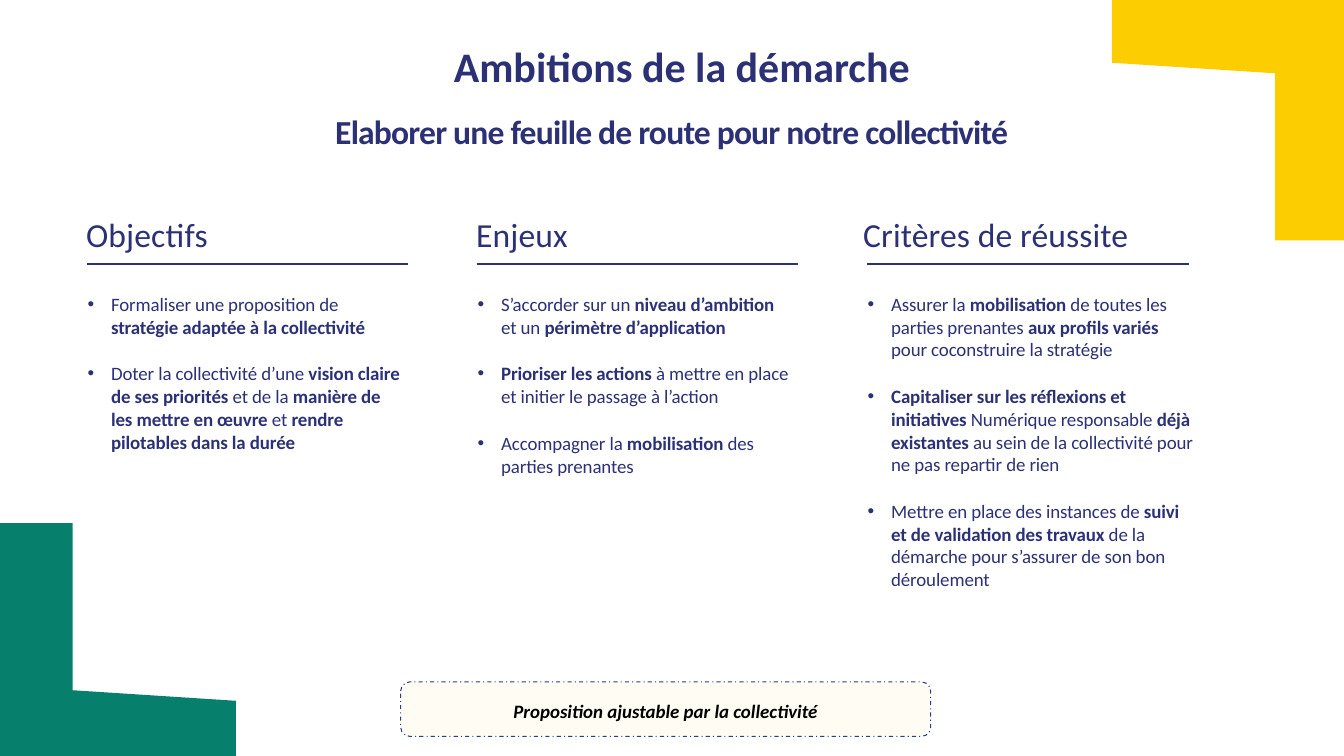
from pptx import Presentation
from pptx.dml.color import RGBColor
from pptx.enum.dml import MSO_LINE
from pptx.enum.shapes import MSO_CONNECTOR, MSO_SHAPE
from pptx.enum.text import MSO_ANCHOR, PP_ALIGN
from pptx.oxml.ns import qn
from pptx.util import Inches, Pt
from lxml.etree import SubElement

COLORS = {
    "ink": "2C3176",
    "yellow": "FCCD00",
    "green": "06806C",
    "cream": "FFFDF3",
    "border": "274084",
    "black": "000000",
}
FONT = "Calibri"
WIDTH, HEIGHT = Inches(17.78), Inches(10)

# The grid has 100 columns and 100 rows.
FIRST_COLUMN, COLUMN_STEP = 6.41, 29.02
RULE_WIDTH = 23.92

YELLOW_CORNER = [(100, 0), (82.73, 0), (82.73, 8.3), (94.88, 9.7), (94.88, 31.8), (100, 31.8)]
GREEN_CORNER = [(5.4, 69.2), (0, 69.2), (0, 100), (17.55, 100), (17.55, 92.7), (5.4, 91.3)]

# Heading, heading shift, list width, list items (** marks bold)
SECTIONS = [
    ("Objectifs", 0, 23.4, [
        "Formaliser une proposition de **stratégie adaptée à la collectivité**",
        "Doter la collectivité d’une **vision claire de ses priorités **et de la "
        "**manière de les mettre en œuvre **et **rendre pilotables dans la durée**",
    ]),
    ("Enjeux", 0, 23.4, [
        "S’accorder sur un **niveau d’ambition **et un **périmètre d’application**",
        "**Prioriser les actions **à mettre en place et initier le passage à l’action",
        "Accompagner la **mobilisation** des parties prenantes",
    ]),
    ("Critères de réussite", -0.22, 24.35, [
        "Assurer la **mobilisation **de toutes les parties prenantes "
        "**aux profils variés **pour coconstruire la stratégie",
        "**Capitaliser sur les réflexions et initiatives **Numérique responsable "
        "**déjà existantes **au sein de la collectivité pour ne pas repartir de rien",
        "Mettre en place des instances de **suivi et de validation des travaux** "
        "de la démarche pour s’assurer de son bon déroulement",
    ]),
]


def color(name):
    return RGBColor.from_string(COLORS[name])


def x(columns):
    return round(WIDTH * columns / 100)


def y(rows):
    return round(HEIGHT * rows / 100)


class SlideBuilder:
    def __init__(self, slide):
        self.slide = slide

    def style(self, paragraph, size, ink="ink", bold=None, italic=None):
        font = paragraph.font
        font.name, font.size = FONT, Pt(size)
        font.bold, font.italic = bold, italic
        font.color.rgb = color(ink)

    def add_runs(self, paragraph, marked, tracking=0):
        """Add runs, bold between ** marks; tracking is in hundredths of a point."""
        for number, piece in enumerate(marked.split("**")):
            if piece:
                run = paragraph.add_run()
                run.text = piece
                if number % 2:
                    run.font.bold = True
                if tracking:
                    run.font._element.set("spc", str(tracking))

    def text_frame(self, left, top, width, height):
        box = self.slide.shapes.add_textbox(x(left), y(top), x(width), y(height))
        frame = box.text_frame
        frame.word_wrap = True
        frame.margin_left = frame.margin_right = frame.margin_bottom = 0
        frame.margin_top = Inches(0.02)
        return frame

    def heading(self, text, left, top, width, height, size,
                align=PP_ALIGN.LEFT, bold=None, tracking=0):
        paragraph = self.text_frame(left, top, width, height).paragraphs[0]
        paragraph.alignment = align
        self.style(paragraph, size, bold=bold)
        self.add_runs(paragraph, text, tracking)

    def bullets(self, items, left, top, width, height):
        frame = self.text_frame(left, top, width, height)
        for number, item in enumerate(items):
            paragraph = frame.add_paragraph() if number else frame.paragraphs[0]
            properties = paragraph._p.get_or_add_pPr()
            properties.set("marL", str(Inches(0.33)))
            properties.set("indent", str(Inches(-0.31)))
            if number:
                paragraph.space_before = Pt(23)
            SubElement(properties, qn("a:buFont"), typeface="Arial")
            SubElement(properties, qn("a:buChar"), char="•")
            self.style(paragraph, 18)
            self.add_runs(paragraph, item, -10)

    def rule(self, left, top, width):
        line = self.slide.shapes.add_connector(
            MSO_CONNECTOR.STRAIGHT, x(left), y(top), x(left + width), y(top))
        line.line.color.rgb = color("ink")
        line.line.width = Pt(2.5)
        SubElement(line._element.spPr, qn("a:effectLst"))

    def corner(self, points, fill):
        start, *others = [(x(column), y(row)) for column, row in points]
        outline = self.slide.shapes.build_freeform(*start)
        outline.add_line_segments(others, close=True)
        shape = outline.convert_to_shape()
        shape.shadow.inherit = False
        shape.fill.solid()
        shape.fill.fore_color.rgb = color(fill)
        shape.line.fill.background()

    def note(self, text, left, top, width, height):
        note = self.slide.shapes.add_shape(
            MSO_SHAPE.ROUNDED_RECTANGLE, x(left), y(top), x(width), y(height))
        note.shadow.inherit = False
        note.fill.solid()
        note.fill.fore_color.rgb = color("cream")
        note.line.color.rgb = color("border")
        note.line.width = Pt(1)
        note.line.dash_style = MSO_LINE.DASH_DOT
        frame = note.text_frame
        frame.word_wrap = True
        frame.vertical_anchor = MSO_ANCHOR.MIDDLE
        frame.margin_top = Inches(0.09)
        paragraph = frame.paragraphs[0]
        paragraph.alignment = PP_ALIGN.CENTER
        self.style(paragraph, 18, "black", bold=True, italic=True)
        self.add_runs(paragraph, text)


def main():
    deck = Presentation()
    deck.slide_width, deck.slide_height = WIDTH, HEIGHT
    builder = SlideBuilder(deck.slides.add_slide(deck.slide_layouts[6]))

    builder.corner(YELLOW_CORNER, "yellow")
    builder.corner(GREEN_CORNER, "green")
    builder.heading("Ambitions de la démarche", 11.14, 5.1, 79.19, 6.9, 40,
                    PP_ALIGN.CENTER, bold=True)
    builder.heading("Elaborer une feuille de route pour notre collectivité",
                    6.13, 14.5, 87.68, 7.4, 32, PP_ALIGN.CENTER, bold=True, tracking=-80)

    for number, (heading, shift, list_width, items) in enumerate(SECTIONS):
        left = FIRST_COLUMN + number * COLUMN_STEP
        builder.heading(heading, left + shift, 28.1, 30.93, 5.5, 32, tracking=10)
        builder.rule(left + 0.06, 34.9, RULE_WIDTH)
        builder.bullets(items, left, 38.5, list_width, 40.1 if number == 2 else 24.9)

    builder.note("Proposition ajustable par la collectivité", 29.81, 90.2, 39.43, 7.2)
    deck.save("out.pptx")


if __name__ == "__main__":
    main()
